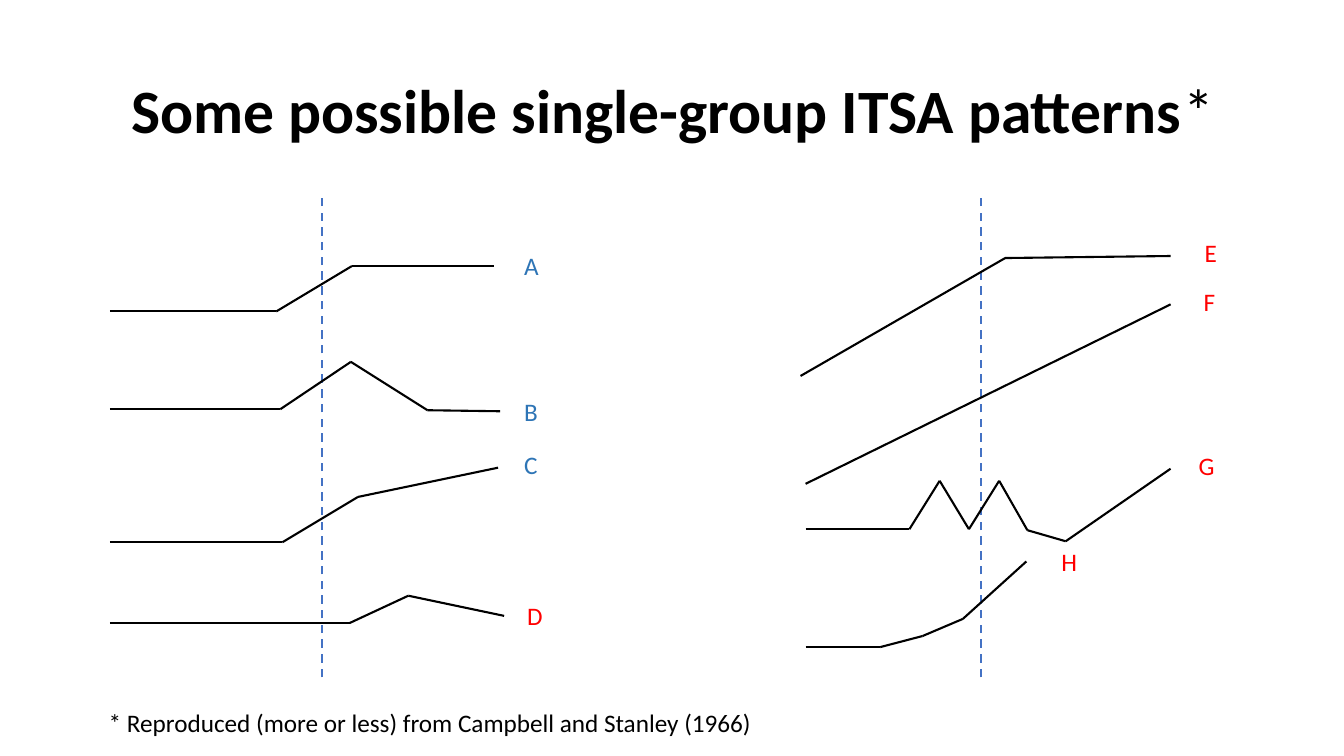
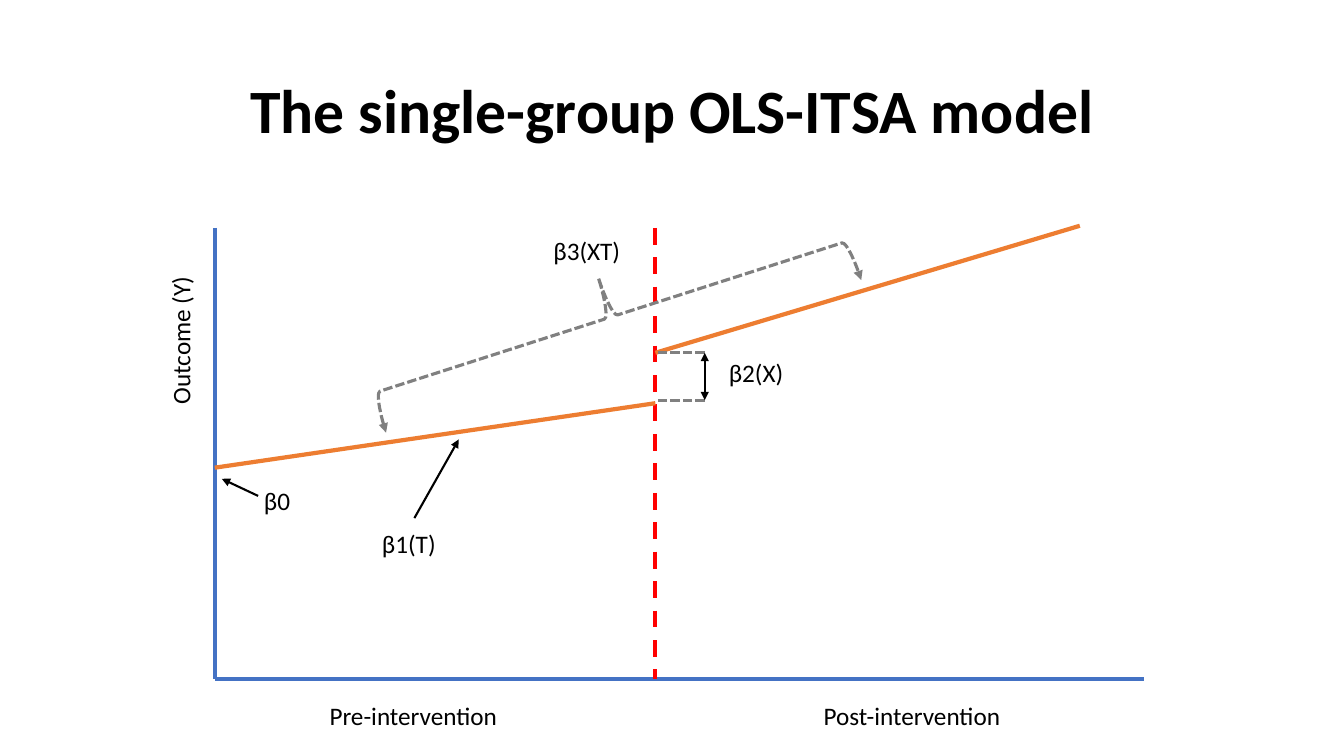
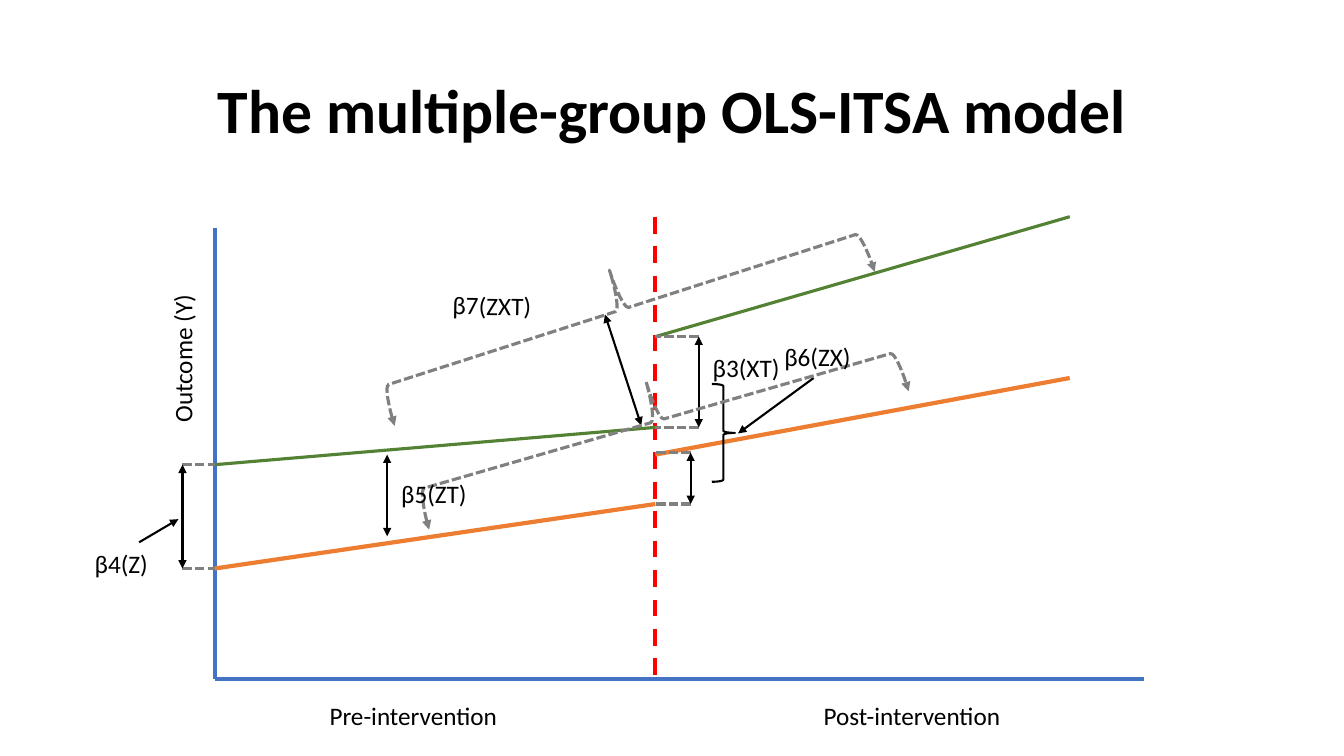
"""Build three slides on interrupted time series patterns and models."""
import dataclasses
import itertools

import lxml.etree
import pptx
import pptx.dml.color
import pptx.enum.dml
import pptx.enum.shapes
import pptx.enum.text
import pptx.oxml.ns
import pptx.util


@dataclasses.dataclass(frozen=True)
class Theme:
    font: str = "Calibri"
    title_size: int = 44
    body_size: int = 18
    black: str = "000000"
    blue: str = "4472C4"
    label_blue: str = "2E75B6"
    red: str = "FF0000"
    orange: str = "ED7D31"
    green: str = "548235"
    gray: str = "808080"


THEME = Theme()
DASH = pptx.enum.dml.MSO_LINE.DASH
SHORT_DASH = pptx.enum.dml.MSO_LINE.SQUARE_DOT
STYLES = {
    "pattern": (THEME.black, 1.5, None),
    "divider": (THEME.blue, 1.5, DASH),
    "axis": (THEME.blue, 3, None),
    "break": (THEME.red, 3, DASH),
    "treated": (THEME.orange, 3, None),
    "control": (THEME.green, 2.25, None),
    "guide": (THEME.gray, 2.25, SHORT_DASH),
}
WIDTH, HEIGHT = 13.33, 7.5
TITLE_BOX = (0.92, 0.4, 11.5, 1.45)
LABEL_HEIGHT = 0.4
AXIS_X, BREAK_X, AXIS_END = 2.13, 6.5, 11.35
AXIS_TOP, AXIS_Y = 2.26, 6.74

DIVIDERS = {"x": (3.19, 9.73), "top": 1.96, "bottom": 6.72}
LEFT, RIGHT, END = 1.09, 7.99, 11.61
PATTERNS = [
    ("A", THEME.label_blue, (5.1, 2.43), [(LEFT, 3.09), (2.74, 3.09), (3.49, 2.64), (4.9, 2.64)]),
    ("B", THEME.label_blue, (5.1, 3.88),
     [(LEFT, 4.06), (2.78, 4.06), (3.48, 3.59), (4.24, 4.07), (4.96, 4.08)]),
    ("C", THEME.label_blue, (5.1, 4.41), [(LEFT, 5.38), (2.8, 5.38), (3.55, 4.93), (4.94, 4.64)]),
    ("D", THEME.red, (5.13, 5.91), [(LEFT, 6.18), (3.47, 6.18), (4.05, 5.91), (5, 6.11)]),
    ("E", THEME.red, (11.85, 2.31), [(7.94, 3.73), (9.97, 2.56), (END, 2.54)]),
    ("F", THEME.red, (11.84, 2.79), [(RIGHT, 4.8), (END, 3.02)]),
    ("G", THEME.red, (11.79, 4.42),
     [(RIGHT, 5.25), (9.02, 5.25), (9.32, 4.77), (9.61, 5.25), (9.91, 4.77),
      (10.19, 5.26), (10.57, 5.37), (END, 4.65)]),
    ("H", THEME.red, (10.43, 5.37),
     [(RIGHT, 6.42), (8.73, 6.42), (9.15, 6.31), (9.55, 6.14), (10.18, 5.57)]),
]
FOOTNOTE = "* Reproduced (more or less) from Campbell and Stanley (1966)"
PERIODS = [("Pre-intervention", 3.17), ("Post-intervention", 8.07)]

MODELS = [
    {
        "title": "The single-group OLS-ITSA model",
        "break_top": AXIS_TOP,
        "outcome": (0.98, 3.1),
        "trends": [
            ("treated", (AXIS_X, 4.64), (BREAK_X, 4)),
            ("treated", (BREAK_X, 3.5), (10.71, 2.24)),
        ],
        "gaps": [(BREAK_X, 6.99, 3.5, 3.97)],
        "pointers": [((2.2, 4.75), (2.56, 4.92)), ((4.55, 4.36), (4.11, 5.14))],
        "spans": [],
        "slope_braces": [(5.65, 0.67, 4.95, 252.2)],
        "level_braces": [],
        "labels": [
            ("β0", 2.52, 4.77, 0.57, 0),
            ("β1(T)", 3.69, 5.19, 0.88, 0),
            ("β2(X)", 7.13, 3.5, 0.88, 0),
            ("β3(XT)", 5.39, 2.29, 0.88, 0),
        ],
    },
    {
        "title": "The multiple-group OLS-ITSA model",
        "break_top": 2.15,
        "outcome": (1, 3.28),
        "trends": [
            ("treated", (AXIS_X, 5.64), (BREAK_X, 5)),
            ("treated", (BREAK_X, 4.51), (10.61, 3.75)),
            ("control", (AXIS_X, 4.61), (BREAK_X, 4.24)),
            ("control", (BREAK_X, 3.34), (10.61, 2.15)),
        ],
        "gaps": [
            (AXIS_X, 1.81, 4.61, 5.64),
            (BREAK_X, 6.85, 4.49, 5),
            (BREAK_X, 6.93, 3.34, 4.24),
        ],
        "pointers": [((1.77, 5.15), (1.38, 5.38)), ((7.32, 4.3), (8.07, 3.75))],
        "spans": [((3.84, 4.51), (3.84, 5.32)), ((6, 3.12), (6.36, 4.22))],
        "slope_braces": [(6.11, 1.7, 4.95, 253.9), (5.76, 0.57, 5, 252.2)],
        "level_braces": [(7.06, 3.81, 0.23, 0.97)],
        "labels": [
            ("β4(Z)", 0.84, 5.39, 0.88, 0),
            ("β5(ZT)", 3.88, 4.7, 0.88, 0),
            ("β6(ZX)", 7.68, 3.34, 0.88, 0),
            ("β7(ZXT)", 4.39, 2.83, 1, 1),
            ("β3(XT)", 6.97, 3.45, 0.88, 0),
        ],
    },
]


def inches(*lengths):
    return [pptx.util.Inches(length) for length in lengths]


def style_line(shape, style, arrows=()):
    color, width, dash = STYLES[style]
    shape.line.color.rgb = pptx.dml.color.RGBColor.from_string(color)
    shape.line.width = pptx.util.Pt(width)
    if dash:
        shape.line.dash_style = dash
    outline = shape.element.spPr.find(pptx.oxml.ns.qn("a:ln"))
    for end in arrows:
        lxml.etree.SubElement(outline, pptx.oxml.ns.qn(f"a:{end}"), type="triangle")


def add_line(slide, style, start, stop, arrows=()):
    connector = slide.shapes.add_connector(
        pptx.enum.shapes.MSO_CONNECTOR.STRAIGHT, *inches(*start, *stop))
    style_line(connector, style, arrows)
    lxml.etree.SubElement(connector.element.spPr, pptx.oxml.ns.qn("a:effectLst"))


def add_brace(slide, style, box, rotation=0, arrows=()):
    brace = slide.shapes.add_shape(pptx.enum.shapes.MSO_SHAPE.RIGHT_BRACE, *inches(*box))
    brace.rotation = rotation
    brace.shadow.inherit = False
    brace.fill.background()
    style_line(brace, style, arrows)


def add_text(slide, box, runs, size=THEME.body_size, color=THEME.black, rotation=0):
    shape = slide.shapes.add_textbox(*inches(*box))
    shape.rotation = rotation
    shape.text_frame.word_wrap = True
    paragraph = shape.text_frame.paragraphs[0]
    for text, bold in runs:
        run = paragraph.add_run()
        run.text = text
        run.font.name = THEME.font
        run.font.size = pptx.util.Pt(size)
        run.font.bold = bold
        run.font.color.rgb = pptx.dml.color.RGBColor.from_string(color)
    return shape


def add_label(slide, text, left, top, width, color=THEME.black, rotation=0):
    add_text(slide, (left, top, width, LABEL_HEIGHT), [(text, False)],
             color=color, rotation=rotation)


def add_titled_slide(presentation, *runs):
    slide = presentation.slides.add_slide(presentation.slide_layouts[6])
    title = add_text(slide, TITLE_BOX, runs, THEME.title_size)
    title.text_frame.vertical_anchor = pptx.enum.text.MSO_ANCHOR.MIDDLE
    paragraph = title.text_frame.paragraphs[0]
    paragraph.alignment = pptx.enum.text.PP_ALIGN.CENTER
    paragraph.line_spacing = 0.9
    return slide


def build_patterns(presentation):
    slide = add_titled_slide(
        presentation, ("Some possible single-group ITSA patterns", True), ("*", False))
    for x in DIVIDERS["x"]:
        add_line(slide, "divider", (x, DIVIDERS["bottom"]), (x, DIVIDERS["top"]))
    for letter, color, position, points in PATTERNS:
        for start, stop in itertools.pairwise(points):
            add_line(slide, "pattern", start, stop)
        add_label(slide, letter, *position, 0.3, color)
    add_label(slide, FOOTNOTE, 0.98, 6.97, 7.62)


def build_model(presentation, model):
    both_ends = ("headEnd", "tailEnd")
    slide = add_titled_slide(presentation, (model["title"], True))
    add_line(slide, "axis", (AXIS_X, AXIS_TOP), (AXIS_X, AXIS_Y))
    add_line(slide, "axis", (AXIS_X, AXIS_Y), (AXIS_END, AXIS_Y))
    add_line(slide, "break", (BREAK_X, model["break_top"]), (BREAK_X, AXIS_Y))
    for trend in model["trends"]:
        add_line(slide, *trend)
    for text, left in PERIODS:
        add_label(slide, text, left, 6.9, 3.11)
    add_label(slide, "Outcome (Y)", *model["outcome"], 1.62, rotation=270)
    for base, x, top, bottom in model["gaps"]:
        for y in (top, bottom):
            add_line(slide, "guide", (x, y), (base, y))
        add_line(slide, "pattern", (x, top), (x, bottom), both_ends)
    for tip, tail in model["pointers"]:
        add_line(slide, "pattern", tip, tail, ("headEnd",))
    for start, stop in model["spans"]:
        add_line(slide, "pattern", start, stop, both_ends)
    for box in model["level_braces"]:
        add_brace(slide, "pattern", box)
    for left, top, length, rotation in model["slope_braces"]:
        add_brace(slide, "guide", (left, top, 0.82, length), rotation, both_ends)
    for text, left, top, width, rotation in model["labels"]:
        add_label(slide, text, left, top, width, rotation=rotation)


def main():
    presentation = pptx.Presentation()
    presentation.slide_width, presentation.slide_height = inches(WIDTH, HEIGHT)
    build_patterns(presentation)
    for model in MODELS:
        build_model(presentation, model)
    presentation.save("out.pptx")


if __name__ == "__main__":
    main()
